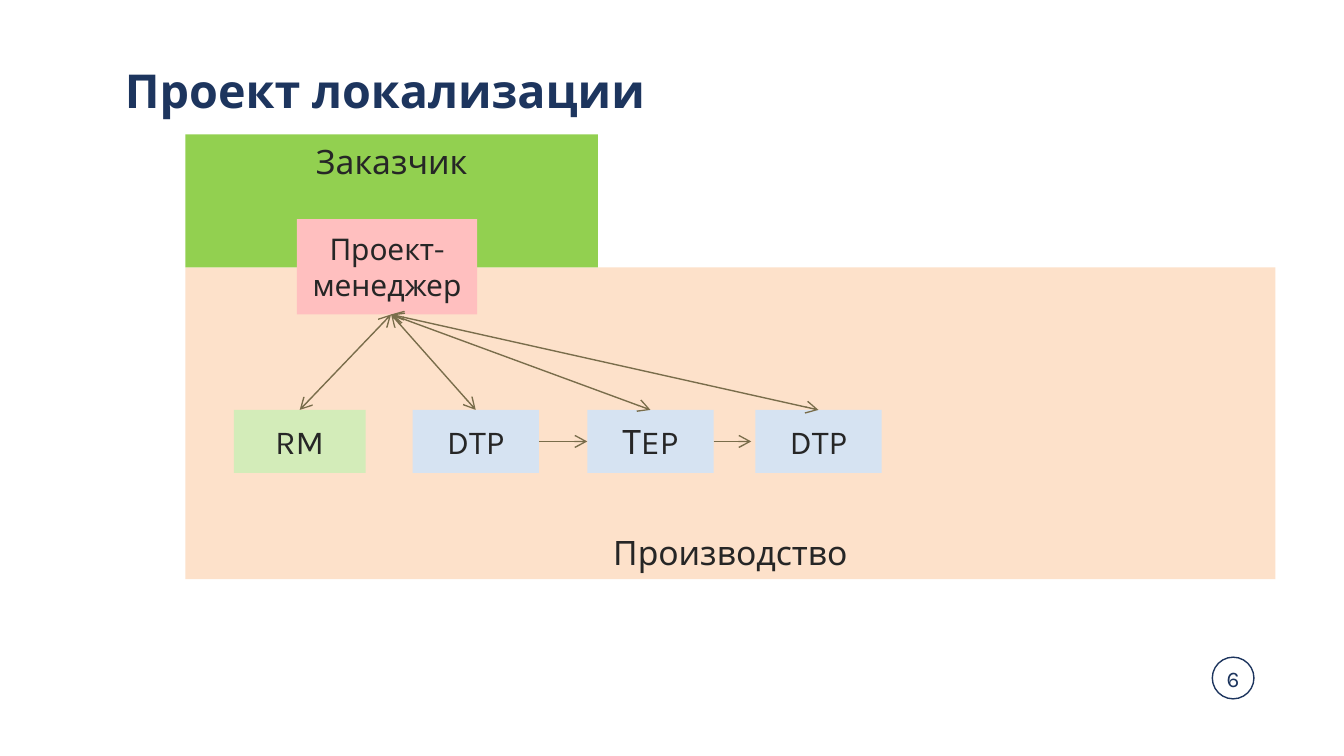
from lxml.etree import SubElement
from pptx import Presentation
from pptx.dml.color import RGBColor
from pptx.enum.shapes import MSO_CONNECTOR, MSO_SHAPE
from pptx.enum.text import MSO_ANCHOR as ANCHOR, PP_ALIGN as ALIGN
from pptx.oxml.ns import qn
from pptx.util import Inches, Pt

FONT = "Karla"
WHITE = RGBColor(0xFF, 0xFF, 0xFF)
NAVY = RGBColor(0x1D, 0x35, 0x5E)
INK = RGBColor(0x26, 0x26, 0x26)
BROWN = RGBColor(0x79, 0x6D, 0x4B)
PEACH = RGBColor(0xFD, 0xE1, 0xCA)
GREEN = RGBColor(0x92, 0xD0, 0x50)
PINK = RGBColor(0xFF, 0xBF, 0xBF)
MINT = RGBColor(0xD3, 0xEC, 0xB9)
SKY = RGBColor(0xD6, 0xE3, 0xF2)

SLIDE_WIDTH = 10
SLIDE_HEIGHT = SLIDE_WIDTH * 9 / 16

TITLE = "Проект локализации"
PAGE_NUMBER = "6"
AREAS = [
    ("Производство", (1.38, 1.99, 8.11, 2.32), PEACH, ANCHOR.BOTTOM, 18),
    ("Заказчик", (1.38, 1, 3.07, 0.99), GREEN, ANCHOR.TOP, 18),
    ("Проект-менеджер", (2.21, 1.63, 1.34, 0.71), PINK, ANCHOR.MIDDLE, 16),
]
ROLES = [
    ("RM", 1.74, 0.98, MINT),
    ("DTP", 3.07, 0.94, SKY),
    ("ТEP", 4.37, 0.94, SKY),
    ("DTP", 5.62, 0.94, SKY),
]
ROLE_TOP, ROLE_HEIGHT = 3.05, 0.47
MANAGER_POINT = (2.91, 2.34)
STEP_ARROWS = [(4.01, 4.37), (5.31, 5.59)]


def style_text(paragraph, text, size, color, align):
    paragraph.text = text
    paragraph.alignment = align
    font = paragraph.font
    font.name, font.size, font.color.rgb = FONT, Pt(size), color


def add_box(slide, text, box, fill, anchor, size):
    shape = slide.shapes.add_shape(MSO_SHAPE.RECTANGLE, *map(Inches, box))
    shape.shadow.inherit = False
    shape.fill.solid()
    shape.fill.fore_color.rgb = fill
    shape.line.fill.background()
    shape.text_frame.vertical_anchor = anchor
    style_text(shape.text_frame.paragraphs[0], text, size, INK, ALIGN.CENTER)


def add_arrow(slide, start, end, both_ends=False):
    connector = slide.shapes.add_connector(
        MSO_CONNECTOR.STRAIGHT, *map(Inches, start + end))
    connector.line.color.rgb = BROWN
    connector.line.width = Pt(0.75)
    line = connector._element.spPr.find(qn("a:ln"))
    for tag in (("a:headEnd", "a:tailEnd") if both_ends else ("a:tailEnd",)):
        SubElement(line, qn(tag), type="arrow")
    SubElement(connector._element.spPr, qn("a:effectLst"))


def add_title(slide):
    title = slide.shapes.title
    title.left, title.top, title.width, title.height = map(
        Inches, (0.83, 0.23, 8.35, 0.94))
    title.text_frame.vertical_anchor = ANCHOR.MIDDLE
    paragraph = title.text_frame.paragraphs[0]
    style_text(paragraph, TITLE, 25, NAVY, ALIGN.LEFT)
    paragraph.font.bold = True
    paragraph.line_spacing = 0.85


def add_page_number(slide):
    circle = slide.shapes.add_shape(
        MSO_SHAPE.OVAL, *map(Inches, (9.02, 4.89, 0.31, 0.31)))
    circle.shadow.inherit = False
    circle.fill.background()
    circle.line.color.rgb = NAVY
    circle.line.width = Pt(0.75)
    number = slide.shapes.add_textbox(*map(Inches, (8.82, 4.9, 0.71, 0.3)))
    number.text_frame.word_wrap = True
    style_text(number.text_frame.paragraphs[0], PAGE_NUMBER, 12, NAVY, ALIGN.CENTER)


def main():
    presentation = Presentation()
    presentation.slide_width = Inches(SLIDE_WIDTH)
    presentation.slide_height = Inches(SLIDE_HEIGHT)
    slide = presentation.slides.add_slide(presentation.slide_layouts[5])
    slide.background.fill.solid()
    slide.background.fill.fore_color.rgb = WHITE
    add_title(slide)
    add_page_number(slide)
    for area in AREAS:
        add_box(slide, *area)
    for text, left, width, fill in ROLES:
        box = (left, ROLE_TOP, width, ROLE_HEIGHT)
        add_box(slide, text, box, fill, ANCHOR.MIDDLE, 18)
        add_arrow(slide, MANAGER_POINT, (left + width / 2, ROLE_TOP), both_ends=True)
    middle = ROLE_TOP + ROLE_HEIGHT / 2
    for start, end in STEP_ARROWS:
        add_arrow(slide, (start, middle), (end, middle))
    presentation.save("out.pptx")


if __name__ == "__main__":
    main()
